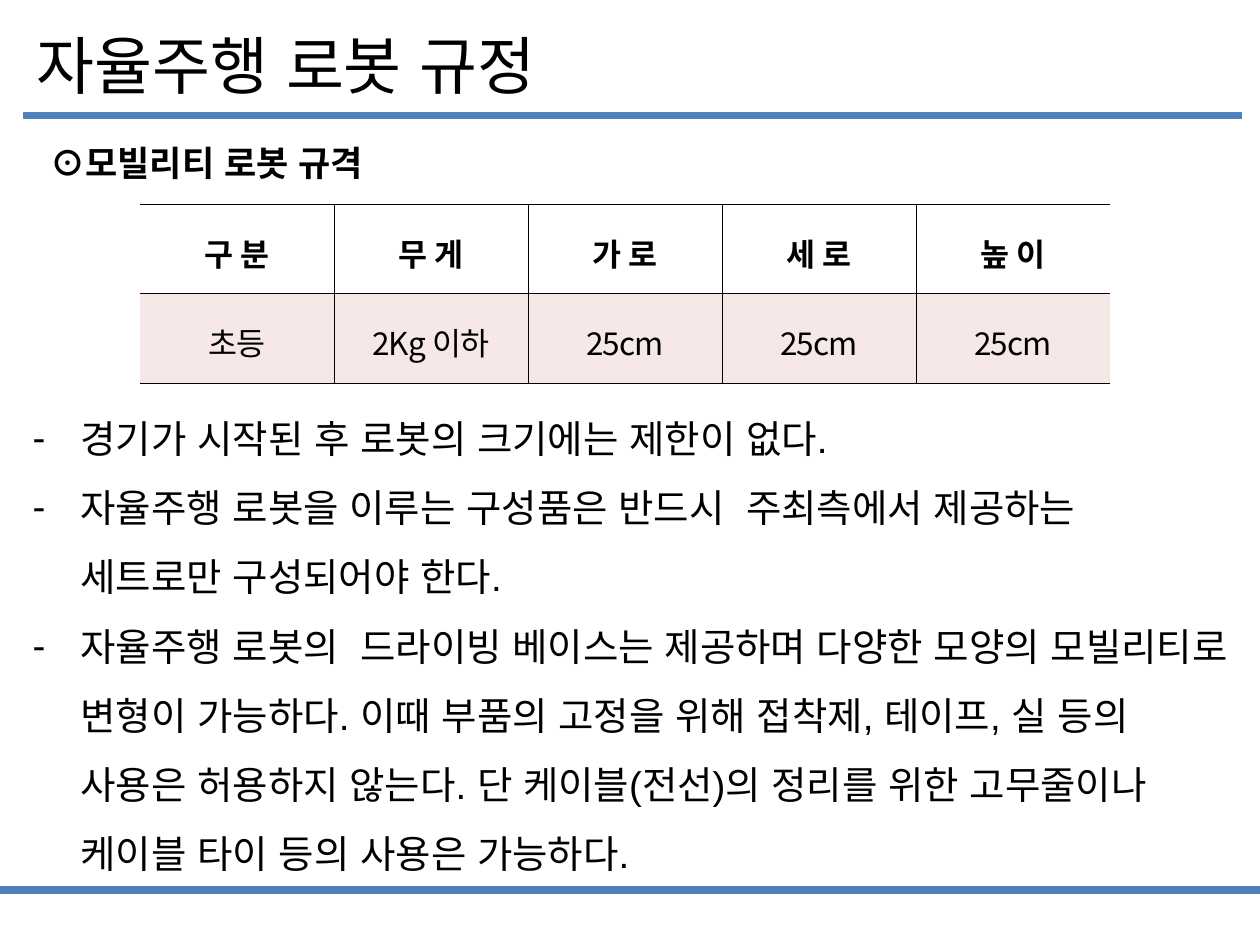
import pptx
import pptx.util
import pptx.dml.color
import pptx.enum.lang
import pptx.enum.shapes
import pptx.enum.text
import pptx.oxml.ns
from lxml import etree

COLORS = {"bar": "4F81BD", "ink": "000000", "header": "FFFFFF", "row": "F7E8E8"}
KOREAN_FONT = "Noto Sans CJK KR"
COLUMNS, ROWS = 100, 75
ALIGN = pptx.enum.text.PP_ALIGN
ANCHOR = pptx.enum.text.MSO_ANCHOR
AUTO_SIZE = pptx.enum.text.MSO_AUTO_SIZE


def add_element(parent, tag, **attributes):
    return etree.SubElement(parent, pptx.oxml.ns.qn(tag), attributes)


def rgb(name):
    return pptx.dml.color.RGBColor.from_string(COLORS[name])


class SlideBuilder:
    """Places styled elements on one slide by a grid of 100 columns and 75 rows."""

    def __init__(self, presentation):
        self.width = presentation.slide_width
        self.height = presentation.slide_height
        self.slide = presentation.slides.add_slide(presentation.slide_layouts[1])

    def box(self, left, top, width, height):
        return (round(left * self.width / COLUMNS), round(top * self.height / ROWS),
                round(width * self.width / COLUMNS), round(height * self.height / ROWS))

    def place(self, shape, box):
        shape.left, shape.top, shape.width, shape.height = self.box(*box)

    def format_runs(self, paragraph, size, font="Arial", bold=False, spacing=None):
        for run in paragraph.runs:
            run.font.size = pptx.util.Pt(size)
            run.font.name = font
            run.font.bold = bold
            run.font.color.rgb = rgb("ink")
            run.font.language_id = pptx.enum.lang.MSO_LANGUAGE_ID.KOREAN
            properties = run._r.get_or_add_rPr()
            add_element(properties, "a:ea", typeface=KOREAN_FONT)
            if spacing is not None:
                properties.set("spc", str(round(spacing * 100)))

    def bar(self, *box):
        shape = self.slide.shapes.add_shape(
            pptx.enum.shapes.MSO_SHAPE.RECTANGLE, *self.box(*box))
        shape.shadow.inherit = False
        shape.fill.solid()
        shape.fill.fore_color.rgb = rgb("bar")
        shape.line.color.rgb = rgb("bar")
        shape.line.width = pptx.util.Pt(0.75)

    def title(self, text, *box):
        shape = self.slide.shapes.title
        self.place(shape, box)
        frame = shape.text_frame
        frame.text = text
        frame.word_wrap = False
        frame.auto_size = AUTO_SIZE.NONE
        frame.vertical_anchor = ANCHOR.TOP
        frame.paragraphs[0].alignment = ALIGN.LEFT
        self.format_runs(frame.paragraphs[0], 36, KOREAN_FONT)

    def heading(self, text, *box):
        frame = self.slide.shapes.add_textbox(*self.box(*box)).text_frame
        frame.word_wrap = True
        frame.text = text
        self.format_runs(frame.paragraphs[0], 20, bold=True)

    def bullets(self, items, *box):
        shape = self.slide.placeholders[1]
        self.place(shape, box)
        frame = shape.text_frame
        frame.text = "\n".join(items)
        frame.word_wrap = True
        frame.auto_size = AUTO_SIZE.NONE
        indent = pptx.util.Inches(0.38)
        for paragraph in frame.paragraphs:
            paragraph.line_spacing = 1.5
            paragraph.space_before = pptx.util.Pt(0)
            properties = paragraph._p.get_or_add_pPr()
            properties.set("marL", str(indent))
            properties.set("indent", str(-indent))
            add_element(properties, "a:buFont", typeface="Arial")
            add_element(properties, "a:buChar", char="-")
            self.format_runs(paragraph, 22)

    def border(self, cell, side, visible):
        width = str(pptx.util.Pt(0.28))
        line = add_element(cell._tc.get_or_add_tcPr(), f"a:ln{side}", w=width)
        if visible:
            fill = add_element(line, "a:solidFill")
            add_element(fill, "a:srgbClr", val=COLORS["ink"])
        else:
            add_element(line, "a:noFill")

    def table(self, rows, *box):
        shape = self.slide.shapes.add_table(len(rows), len(rows[0]), *self.box(*box))
        table = shape.table
        table.first_row = table.horz_banding = False
        last = len(rows[0]) - 1
        for row_index, row in enumerate(rows):
            is_header = row_index == 0
            for column_index, text in enumerate(row):
                cell = table.cell(row_index, column_index)
                cell.text = text
                cell.vertical_anchor = ANCHOR.MIDDLE
                margin = pptx.util.Inches(0.02)
                cell.margin_left = cell.margin_right = margin
                cell.margin_top = cell.margin_bottom = margin
                self.border(cell, "L", column_index > 0)
                self.border(cell, "R", column_index < last)
                self.border(cell, "T", True)
                self.border(cell, "B", True)
                cell.fill.solid()
                cell.fill.fore_color.rgb = rgb("header" if is_header else "row")
                paragraph = cell.text_frame.paragraphs[0]
                paragraph.alignment = ALIGN.CENTER
                paragraph.line_spacing = 1.15
                self.format_runs(paragraph, 18, KOREAN_FONT, is_header, -0.5)


def main():
    presentation = pptx.Presentation()
    presentation.slide_width = pptx.util.Inches(10)
    presentation.slide_height = pptx.util.Inches(7.5)
    builder = SlideBuilder(presentation)
    builder.bar(0, 70.4, 100, 0.5)
    builder.bar(1.9, 8.9, 96.6, 0.5)
    builder.title("자율주행 로봇 규정", 1.9, 1.6, 44.3, 7.1)
    builder.table([
        ["구 분", "무 게", "가 로", "세 로", "높 이"],
        ["초등", "2Kg 이하", "25cm", "25cm", "25cm"],
    ], 11.1, 16.2, 77, 14.2)
    builder.heading("⊙모빌리티 로봇 규격", 3, 10.7, 35.2, 4.4)
    builder.bullets([
        "경기가 시작된 후 로봇의 크기에는 제한이 없다.",
        "자율주행 로봇을 이루는 구성품은 반드시  주최측에서 제공하는\v"
        "세트로만 구성되어야 한다.",
        "자율주행 로봇의  드라이빙 베이스는 제공하며 다양한 모양의 모빌리티로 "
        "변형이 가능하다. 이때 부품의 고정을 위해 접착제, 테이프, 실 등의 "
        "사용은 허용하지 않는다. 단 케이블(전선)의 정리를 위한 고무줄이나 "
        "케이블 타이 등의 사용은 가능하다.",
    ], 1.6, 30.6, 97.3, 39)
    presentation.save("out.pptx")


if __name__ == "__main__":
    main()
